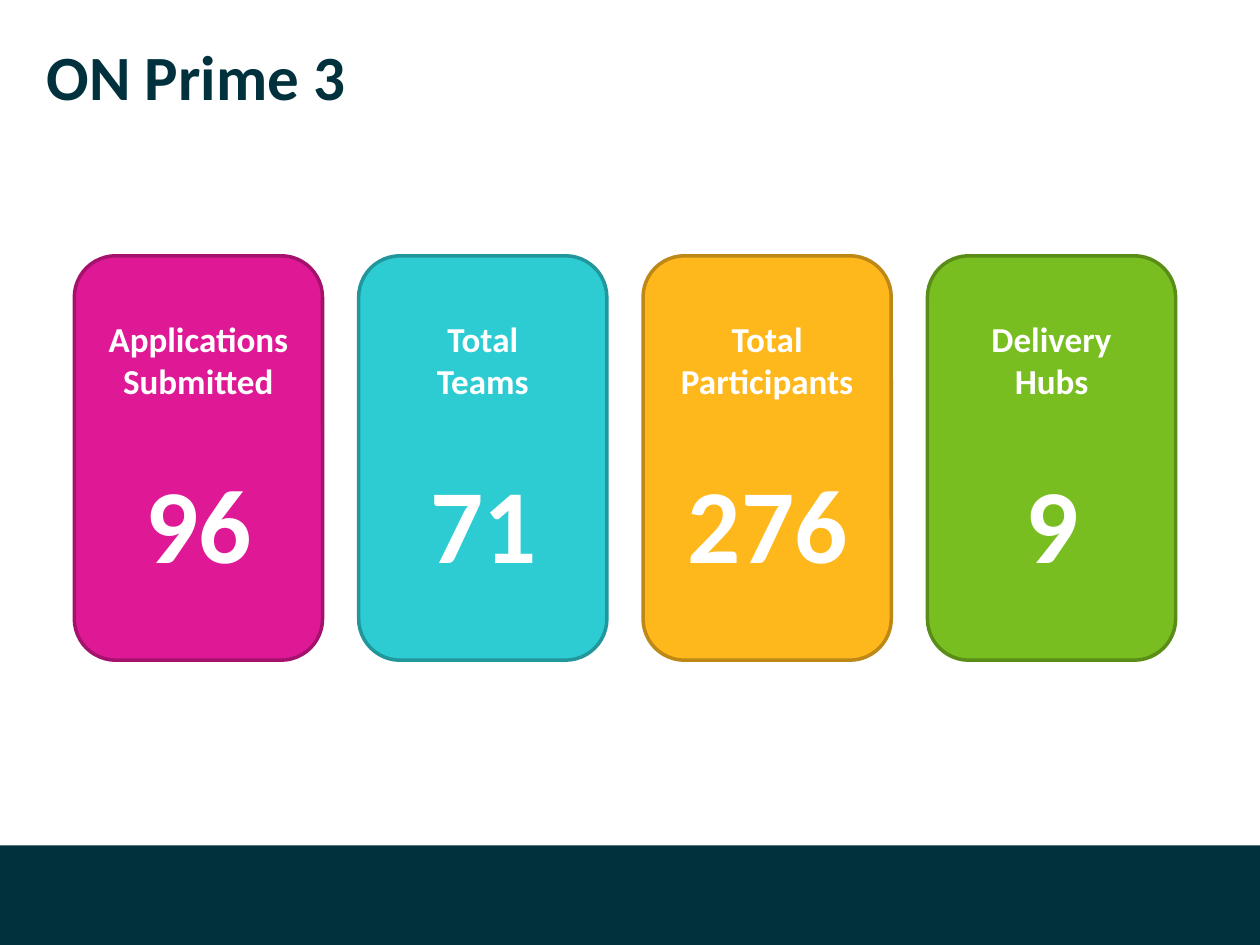
import dataclasses
import typing

import pptx
import pptx.dml.color
import pptx.enum.shapes
import pptx.enum.text
import pptx.shapes.autoshape
import pptx.slide
import pptx.util

Inches = pptx.util.Inches
RGBColor = pptx.dml.color.RGBColor
MSO_SHAPE = pptx.enum.shapes.MSO_SHAPE
PP_ALIGN = pptx.enum.text.PP_ALIGN


@dataclasses.dataclass(frozen=True)
class Theme:
    font: str = "Calibri"
    navy: str = "00313C"
    white: str = "FFFFFF"
    title_size: int = 36
    label_size: int = 20
    figure_size: int = 60
    outline: int = 2


@dataclasses.dataclass(frozen=True)
class Card:
    label: typing.Tuple[str, ...]
    figure: str
    fill: str
    outline: str


@dataclasses.dataclass(frozen=True)
class Box:
    left: float
    top: float
    width: float
    height: float

    def lengths(self) -> typing.Tuple[pptx.util.Length, ...]:
        return tuple(Inches(value) for value in dataclasses.astuple(self))


THEME = Theme()
CARDS = (
    Card(("Applications Submitted",), "96", "DF1995", "A5126E"),
    Card(("Total", "Teams"), "71", "2DCCD3", "21979C"),
    Card(("Total Participants",), "276", "FFB81C", "BD8815"),
    Card(("Delivery", "Hubs"), "9", "78BE20", "598D18"),
)
FIRST_CARD_LEFT = 0.59
CARD_PITCH = 2.257


def add_panel(
    slide: pptx.slide.Slide, preset: MSO_SHAPE, box: Box, fill: str
) -> pptx.shapes.autoshape.Shape:
    panel = slide.shapes.add_shape(preset, *box.lengths())
    panel.shadow.inherit = False
    panel.fill.solid()
    panel.fill.fore_color.rgb = RGBColor.from_string(fill)
    panel.line.fill.background()
    return panel


def add_text(
    slide: pptx.slide.Slide,
    box: Box,
    lines: typing.Sequence[str],
    size: int,
    color: str,
    align: PP_ALIGN = PP_ALIGN.CENTER,
) -> pptx.text.text.TextFrame:
    frame = slide.shapes.add_textbox(*box.lengths()).text_frame
    frame.word_wrap = True
    for index, line in enumerate(lines):
        paragraph = frame.add_paragraph() if index else frame.paragraphs[0]
        paragraph.alignment = align
        run = paragraph.add_run()
        run.text = line
        run.font.name = THEME.font
        run.font.size = pptx.util.Pt(size)
        run.font.bold = True
        run.font.color.rgb = RGBColor.from_string(color)
    return frame


def add_card(slide: pptx.slide.Slide, card: Card, left: float) -> None:
    panel = add_panel(
        slide, MSO_SHAPE.ROUNDED_RECTANGLE, Box(left, 2.03, 1.97, 3.21), card.fill
    )
    panel.line.color.rgb = RGBColor.from_string(card.outline)
    panel.line.width = pptx.util.Pt(THEME.outline)
    add_text(
        slide, Box(left + 0.12, 2.47, 1.73, 0.77),
        card.label, THEME.label_size, THEME.white,
    )
    add_text(
        slide, Box(left + 0.07, 3.59, 1.84, 1.11),
        (card.figure,), THEME.figure_size, THEME.white,
    )


def main() -> None:
    deck = pptx.Presentation()
    deck.slide_width = Inches(10)
    deck.slide_height = Inches(7.5)
    slide = deck.slides.add_slide(deck.slide_layouts[6])

    add_panel(slide, MSO_SHAPE.RECTANGLE, Box(0, 6.71, 10, 0.79), THEME.navy)
    title = add_text(
        slide, Box(0.37, 0.3, 9.28, 0.93),
        ("ON Prime 3",), THEME.title_size, THEME.navy, PP_ALIGN.LEFT,
    )
    title.margin_left = title.margin_right = Inches(0)
    title.margin_top = title.margin_bottom = Inches(0)

    for index, card in enumerate(CARDS):
        add_card(slide, card, FIRST_CARD_LEFT + index * CARD_PITCH)

    deck.save("out.pptx")


if __name__ == "__main__":
    main()
